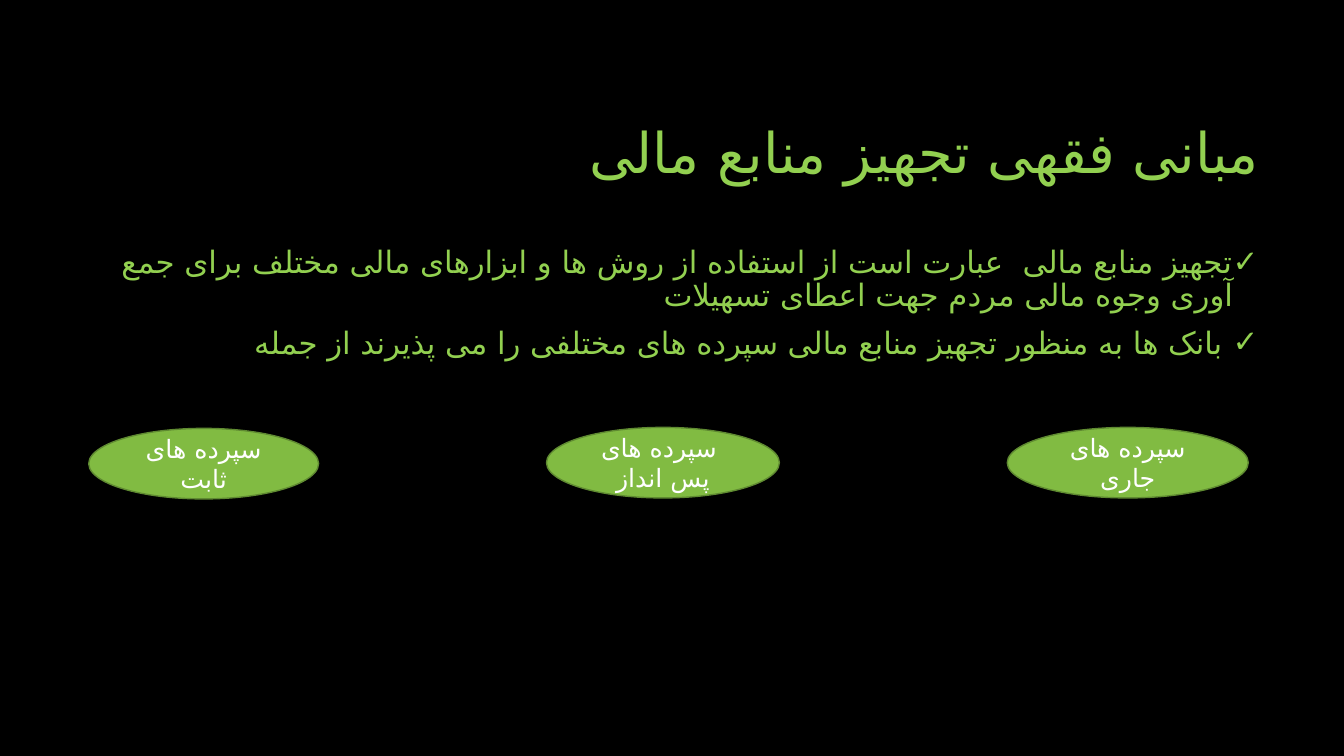
import pptx
import pptx.util
import pptx.dml.color
import pptx.enum.shapes
import pptx.enum.text
import pptx.oxml
import pptx.oxml.ns
from pptx.util import Inches

ALIGN = pptx.enum.text.PP_ALIGN
MIDDLE = pptx.enum.text.MSO_ANCHOR.MIDDLE
TOP = pptx.enum.text.MSO_ANCHOR.TOP


def color(value):
    return pptx.dml.color.RGBColor.from_string(value)


def write(sp, lines, size, ink, anchor, paragraph_format):
    tf = sp.text_frame
    for name, value in {
        "word_wrap": True,
        "auto_size": pptx.enum.text.MSO_AUTO_SIZE.NONE,
        "vertical_anchor": anchor,
        "text": "\n".join(lines),
    }.items():
        setattr(tf, name, value)
    for p in tf.paragraphs:
        for name, value in paragraph_format.items():
            setattr(p, name, value)
        for r in p.runs:
            r.font.name = "Quicksand"
            r.font.size = pptx.util.Pt(size)
            r.font.color.rgb = color(ink)
            cs = pptx.oxml.parse_xml(
                f'<a:cs {pptx.oxml.ns.nsdecls("a")} typeface="DejaVu Sans"/>'
            )
            r.font._element.append(cs)


prs = pptx.Presentation()
prs.slide_width = Inches(13.33)
prs.slide_height = Inches(7.5)
s = prs.slides.add_slide(prs.slide_layouts[1])
s.background.fill.solid()
s.background.fill.fore_color.rgb = color("000000")

title = s.shapes.title
body = s.placeholders[1]
for sp, box in [(title, (3.17, 0.84, 9.42, 1.41)), (body, (0.75, 2.4, 11.83, 4.4))]:
    sp.left, sp.top, sp.width, sp.height = map(Inches, box)

right_to_left = {"alignment": ALIGN.RIGHT, "line_spacing": 0.9, "space_before": 0}
write(title, ["مبانی فقهی تجهیز منابع مالی"], 40, "92D050", MIDDLE, right_to_left)
points = [
    "تجهیز منابع مالی  عبارت است از استفاده از روش ها و ابزارهای مالی مختلف "
    "برای جمع آوری وجوه مالی مردم جهت اعطای تسهیلات",
    " بانک ها به منظور تجهیز منابع مالی سپرده های مختلفی را می پذیرند از جمله",
]
write(body, points, 22, "92D050", TOP, right_to_left)
body.text_frame.paragraphs[1].space_before = pptx.util.Pt(10)

for p in [*title.text_frame.paragraphs, *body.text_frame.paragraphs]:
    p._p.get_or_add_pPr().set("rtl", "1")
for p in body.text_frame.paragraphs:
    pPr = p._p.get_or_add_pPr()
    pPr.set("marL", str(Inches(0.25)))
    pPr.set("indent", str(Inches(-0.25)))
    pPr.append(pptx.oxml.parse_xml(
        f'<a:buChar {pptx.oxml.ns.nsdecls("a")} char="✓"/>'
    ))

deposits = [
    (9.99, 4.24, 2.39, ["سپرده های جاری"]),
    (5.42, 4.24, 2.31, ["سپرده های ", "پس انداز"]),
    (0.88, 4.25, 2.28, ["سپرده های ثابت"]),
]
for left, top, width, lines in deposits:
    sp = s.shapes.add_shape(
        pptx.enum.shapes.MSO_SHAPE.OVAL,
        Inches(left), Inches(top), Inches(width), Inches(0.7),
    )
    sp.shadow.inherit = False
    sp.fill.solid()
    sp.fill.fore_color.rgb = color("81BB42")
    sp.line.color.rgb = color("5F8A31")
    sp.line.width = pptx.util.Pt(1)
    write(sp, lines, 18, "FFFFFF", MIDDLE, {"alignment": ALIGN.CENTER})

prs.save("out.pptx")
